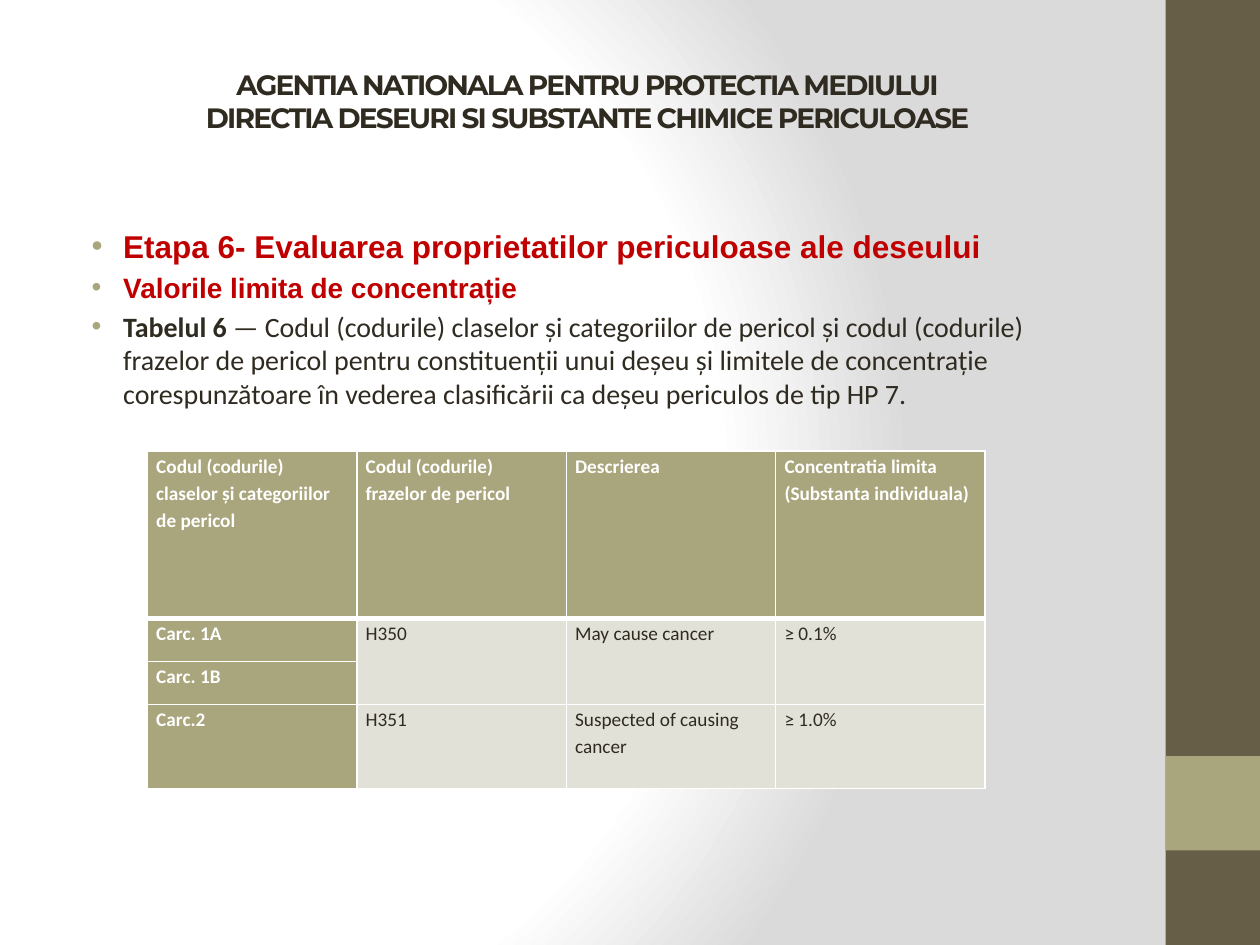
from pptx import Presentation
from pptx.dml.color import RGBColor
from pptx.enum.shapes import MSO_SHAPE
from pptx.enum.text import MSO_ANCHOR, PP_ALIGN
from pptx.oxml import parse_xml
from pptx.oxml.ns import nsdecls
from pptx.util import Inches, Pt

BROWN = RGBColor(0x67, 0x5E, 0x47)
OLIVE = RGBColor(0xA9, 0xA5, 0x7C)
PALE = RGBColor(0xE2, 0xE1, 0xD7)
DARK = RGBColor(0x2F, 0x2B, 0x20)
RED = RGBColor(0xC0, 0x00, 0x00)
WHITE = RGBColor(0xFF, 0xFF, 0xFF)
GREY = RGBColor(0xDA, 0xDA, 0xDA)

TITLE = ["AGENTIA NATIONALA PENTRU PROTECTIA MEDIULUI",
         "DIRECTIA DESEURI SI SUBSTANTE CHIMICE PERICULOASE"]
BULLETS = [
    (["Etapa 6- Evaluarea proprietatilor periculoase ale deseului"],
     "Arial", 18, RED),
    (["Valorile limita de concentrație"], "Arial", 16, RED),
    (["Tabelul 6",
      " — Codul (codurile) claselor și categoriilor de pericol și codul "
      "(codurile) frazelor de pericol pentru constituenții unui deșeu și "
      "limitele de concentrație corespunzătoare în vederea clasificării ca "
      "deșeu periculos de tip HP 7."], "Calibri", 16, DARK),
]
ROWS = [
    ["Codul (codurile) claselor și categoriilor de pericol",
     "Codul (codurile) frazelor de pericol", "Descrierea",
     "Concentratia limita\n(Substanta individuala)"],
    ["Carc. 1A", "H350", "May cause cancer", "≥ 0.1%"],
    ["Carc. 1B", "", "", ""],
    ["Carc.2", "H351", "Suspected of causing cancer", "≥ 1.0%"],
]
HEIGHTS = [1.33, 0.34, 0.34, 0.67]


def set_font(para, name, size, color, bold):
    font = para.font
    font.name, font.size, font.bold = name, Pt(size), bold
    font.color.rgb = color


def add_back(slide):
    stops = "".join(
        f'<a:gs pos="{pos * 1000}"><a:srgbClr val="{color}"/></a:gs>'
        for pos, color in [(0, WHITE), (75, WHITE), (100, GREY)])
    slide.element.cSld.insert(0, parse_xml(
        f'<p:bg {nsdecls("p", "a")}><p:bgPr><a:gradFill rotWithShape="1">'
        f'<a:gsLst>{stops}</a:gsLst><a:path path="circle">'
        '<a:fillToRect l="20000" t="50000" r="100000" b="50000"/></a:path>'
        '</a:gradFill><a:effectLst/></p:bgPr></p:bg>'))


def add_band(slide, top, height, color):
    band = slide.shapes.add_shape(MSO_SHAPE.RECTANGLE, Inches(9.25),
                                  Inches(top), Inches(0.75), Inches(height))
    band.shadow.inherit = False
    band.fill.solid()
    band.fill.fore_color.rgb = color
    band.line.fill.background()


def add_box(slide, top, height):
    box = slide.shapes.add_textbox(Inches(0.5), Inches(top),
                                   Inches(8.33), Inches(height))
    box.text_frame.word_wrap = True
    return box.text_frame


def add_title(slide):
    frame = add_box(slide, 0.3, 1)
    frame.vertical_anchor = MSO_ANCHOR.MIDDLE
    frame.text = "\n".join(TITLE)
    for para in frame.paragraphs:
        para.alignment = PP_ALIGN.CENTER
        set_font(para, "Montserrat", 16, DARK, True)
        for run in para.runs:
            run.font._element.set("spc", "-100")


def add_bullet(para):
    props = para._p.get_or_add_pPr()
    props.set("marL", str(Inches(0.38)))
    props.set("indent", str(Inches(-0.25)))
    for tag in (f'<a:buClr {nsdecls("a")}><a:srgbClr val="{OLIVE}"/></a:buClr>',
                f'<a:buFont {nsdecls("a")} typeface="Arial"/>',
                f'<a:buChar {nsdecls("a")} char="•"/>'):
        props.append(parse_xml(tag))


def add_body(slide):
    frame = add_box(slide, 1.75, 1.65)
    for i, (parts, name, size, color) in enumerate(BULLETS):
        para = frame.add_paragraph() if i else frame.paragraphs[0]
        para.space_before = Pt(size * 0.2)
        add_bullet(para)
        set_font(para, name, size, color, None)
        for j, part in enumerate(parts):
            run = para.add_run()
            run.text = part
            run.font.bold = j == 0


def set_edges(cell, widths):
    props = cell._tc.get_or_add_tcPr()
    for i, (side, width) in enumerate(zip("LRTB", widths)):
        props.insert(i, parse_xml(
            f'<a:ln{side} {nsdecls("a")} w="{Pt(width)}"><a:solidFill>'
            f'<a:srgbClr val="{WHITE}"/></a:solidFill></a:ln{side}>'))


def fill_cell(cell, text, row, col):
    key = row == 0 or col == 0
    cell.margin_left = cell.margin_right = Inches(0.07)
    cell.margin_top = cell.margin_bottom = 0
    cell.fill.solid()
    cell.fill.fore_color.rgb = OLIVE if key else PALE
    set_edges(cell, [1, 1, 3 if row == 1 else 1, 3 if row == 0 else 1])
    cell.text = text
    for para in cell.text_frame.paragraphs:
        para.line_spacing = 1.15
        set_font(para, "Calibri", 11, WHITE if key else DARK, key)


def add_grid(slide):
    table = slide.shapes.add_table(
        len(ROWS), len(ROWS[0]), Inches(1.17), Inches(3.58),
        Inches(6.65), Inches(sum(HEIGHTS))).table
    for row, texts in enumerate(ROWS):
        table.rows[row].height = Inches(HEIGHTS[row])
        for col, text in enumerate(texts):
            fill_cell(table.cell(row, col), text, row, col)
    for col in range(1, len(ROWS[0])):
        table.cell(1, col).merge(table.cell(2, col))


def main():
    deck = Presentation()
    deck.slide_width, deck.slide_height = Inches(10), Inches(7.5)
    slide = deck.slides.add_slide(deck.slide_layouts[6])
    add_back(slide)
    add_band(slide, 0, 7.5, BROWN)
    add_band(slide, 6, 0.75, OLIVE)
    add_title(slide)
    add_body(slide)
    add_grid(slide)
    deck.save("out.pptx")


if __name__ == "__main__":
    main()
